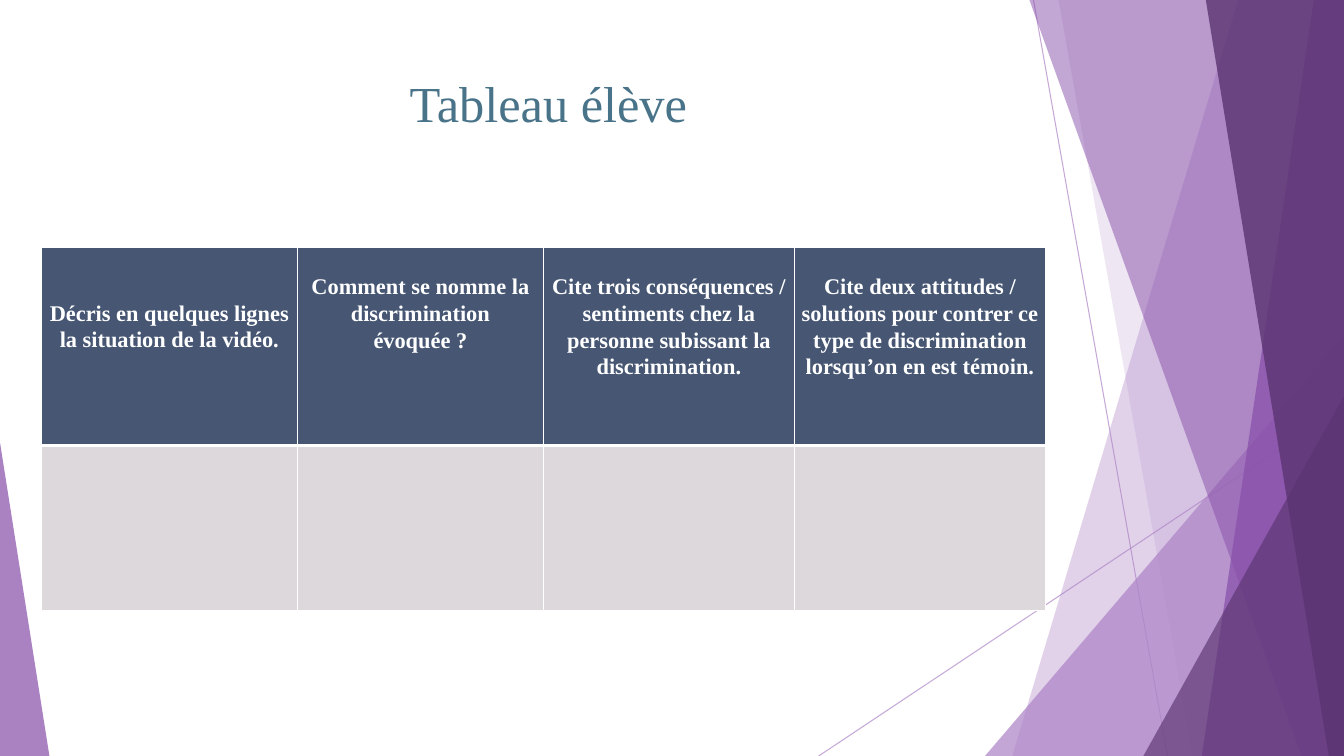
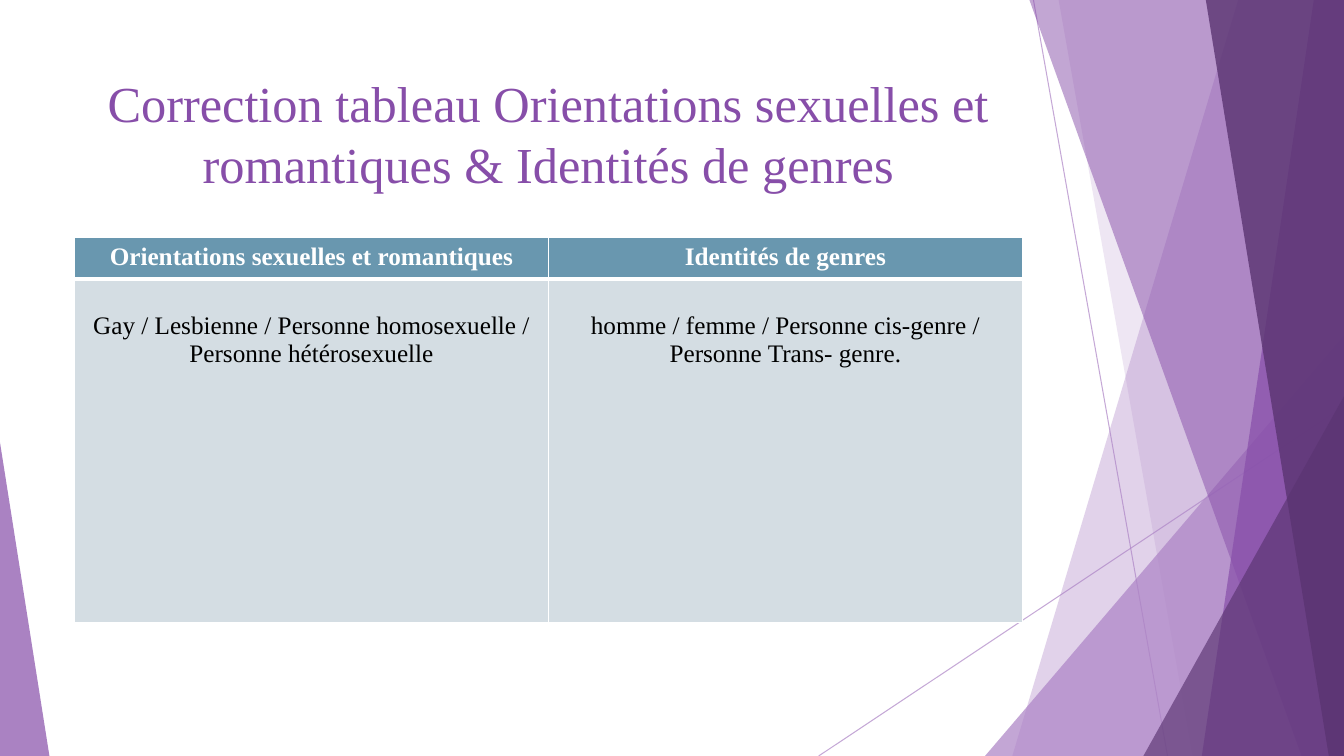
from pptx import Presentation
from pptx.dml.color import RGBColor
from pptx.enum.shapes import MSO_CONNECTOR, MSO_SHAPE
from pptx.enum.text import MSO_ANCHOR, MSO_AUTO_SIZE, PP_ALIGN
from pptx.oxml.xmlchemy import OxmlElement
from pptx.util import Inches, Pt

FONT = "Times New Roman"
SLIDE_WIDTH, SLIDE_HEIGHT = 13.33, 7.5
WHITE, BLACK = "FFFFFF", "000000"
LILAC, PURPLE, PLUM = "AD84C6", "874EA9", "5A3471"
TEAL, NAVY, GREY = "497389", "465673", "DCD8DC"
BLUE, PALE_BLUE = "6997AF", "D4DDE3"


def rgb(color):
    """Turn a hex string into a colour."""
    return RGBColor.from_string(color)


def set_alpha(shape, percent):
    """Make the solid colour of a shape or line translucent."""
    for color in shape.element.xpath(".//a:solidFill/a:srgbClr"):
        alpha = OxmlElement("a:alpha")
        alpha.set("val", str(percent * 1000))
        color.append(alpha)


def paint(shape, color, alpha):
    """Give a shape a translucent fill without outline or shadow."""
    shape.fill.solid()
    shape.fill.fore_color.rgb = rgb(color)
    shape.line.fill.background()
    shape.shadow.inherit = False
    set_alpha(shape, alpha)


def add_thin_line(slide, *ends):
    """Draw a thin lilac line between two points."""
    line = slide.shapes.add_connector(MSO_CONNECTOR.STRAIGHT, *map(Inches, ends))
    line.line.color.rgb = rgb(LILAC)
    line.line.width = Pt(0.75)
    set_alpha(line, 70)
    line.element.spPr.append(OxmlElement("a:effectLst"))


def add_band(slide, top_x, bottom_x, color, alpha):
    """Fill the area from a slanted edge to the right side of the slide."""
    corners = [(SLIDE_WIDTH, 0), (SLIDE_WIDTH, SLIDE_HEIGHT), (bottom_x, SLIDE_HEIGHT)]
    builder = slide.shapes.build_freeform(Inches(top_x), 0)
    builder.add_line_segments([(Inches(x), Inches(y)) for x, y in corners])
    paint(builder.convert_to_shape(), color, alpha)


def add_corner(slide, left, right, top, apex, color, alpha):
    """Place a right-angled triangle on the bottom edge of the slide."""
    box = map(Inches, (left, top, right - left, SLIDE_HEIGHT - top))
    shape = slide.shapes.add_shape(MSO_SHAPE.ISOSCELES_TRIANGLE, *box)
    shape.adjustments[0] = apex
    paint(shape, color, alpha)


def decorate_layout(layout, slide):
    """Draw the shared facets and move them to the layout."""
    add_thin_line(slide, 10.25, 0, 11.58, SLIDE_HEIGHT)
    add_thin_line(slide, SLIDE_WIDTH, 4.03, 8.12, SLIDE_HEIGHT)
    add_band(slide, 12.28, 10.04, LILAC, 36)
    add_band(slide, 10.5, 11.83, LILAC, 20)
    add_corner(slide, 9.77, SLIDE_WIDTH, 3.33, 1, LILAC, 72)
    add_band(slide, 10.21, 12.91, PURPLE, 50)
    add_band(slide, 13.03, 11.92, PURPLE, 70)
    add_band(slide, 11.96, 13.18, PLUM, 80)
    add_corner(slide, 11.34, SLIDE_WIDTH, 3.93, 1, PLUM, 66)
    add_corner(slide, 0, 0.49, 4.39, 0, PURPLE, 70)
    facets = [shape for shape in slide.shapes if not shape.is_placeholder]
    for index, facet in enumerate(facets):
        facet.element.xpath(".//p:cNvPr")[0].set("id", str(100 + index))
        layout.shapes.element.insert(2 + index, facet.element)


def format_text(text_frame, size, color, bold=False):
    """Centre the text and set its font."""
    for paragraph in text_frame.paragraphs:
        paragraph.alignment = PP_ALIGN.CENTER
        for run in paragraph.runs:
            run.font.name = FONT
            run.font.size = Pt(size)
            run.font.bold = bold
            run.font.color.rgb = rgb(color)


def set_title(slide, text, color, height):
    """Fill and place the title."""
    title = slide.shapes.title
    title.left, title.top = Inches(0.74), Inches(0.67)
    title.width, title.height = Inches(9.4), Inches(height)
    text_frame = title.text_frame
    text_frame.text = text
    text_frame.vertical_anchor = MSO_ANCHOR.TOP
    text_frame.auto_size = MSO_AUTO_SIZE.NONE
    format_text(text_frame, 36, color)


def set_borders(cell, thick_edge):
    """Draw white cell borders, with one thick edge."""
    properties = cell._tc.get_or_add_tcPr()
    for index, edge in enumerate(("lnL", "lnR", "lnT", "lnB")):
        line = OxmlElement(f"a:{edge}")
        line.set("w", str(Pt(3 if edge == thick_edge else 1)))
        fill = OxmlElement("a:solidFill")
        color = OxmlElement("a:srgbClr")
        color.set("val", WHITE)
        fill.append(color)
        line.append(fill)
        properties.insert(index, line)


def add_grid(slide, left, top, widths, heights, fills):
    """Add a table with a header row and a body row."""
    frame = slide.shapes.add_table(
        len(heights), len(widths), Inches(left), Inches(top),
        Inches(sum(widths)), Inches(sum(heights)))
    table = frame.table
    table.horz_banding = False
    for column, width in zip(table.columns, widths):
        column.width = Inches(width)
    for row, height, color, edge in zip(table.rows, heights, fills, ("lnB", "lnT")):
        row.height = Inches(height)
        for cell in row.cells:
            cell.fill.solid()
            cell.fill.fore_color.rgb = rgb(color)
            set_borders(cell, edge)
    return table


def fill_cell(cell, text, size, color, bold, top=0.05):
    """Write a centred text into a cell, below the given margin."""
    cell.text_frame.text = text
    cell.margin_top = Inches(top)
    format_text(cell.text_frame, size, color, bold)


def build_student_table(slide):
    """Build the table that the student fills in."""
    set_title(slide, "Tableau élève", TEAL, 0.76)
    table = add_grid(slide, 0.41, 2.45, (2.54, 2.44, 2.49, 2.49), (1.97, 1.64), (NAVY, GREY))
    questions = (
        ("Décris en quelques lignes la situation de la vidéo.", 0.52),
        ("Comment se nomme la discrimination évoquée ?", 0.26),
        ("Cite trois conséquences / sentiments chez la personne subissant la discrimination.", 0.26),
        ("Cite deux attitudes / solutions pour contrer ce type de discrimination "
         "lorsqu’on en est témoin.", 0.26),
    )
    for cell, (question, top) in zip(table.rows[0].cells, questions):
        fill_cell(cell, question, 16, WHITE, True, top)
        cell.margin_left = cell.margin_right = Inches(0.07)
        cell.margin_bottom = 0
        cell.text_frame.paragraphs[0].line_spacing = 1.07


def build_correction(slide):
    """Build the table with the answers."""
    set_title(slide, "Correction tableau Orientations sexuelles et romantiques & "
              "Identités de genres", PURPLE, 1.44)
    table = add_grid(slide, 0.74, 2.36, (4.7, 4.7), (0.41, 3.41), (BLUE, PALE_BLUE))
    answers = (
        ("Orientations sexuelles et romantiques",
         "Gay / Lesbienne / Personne homosexuelle / Personne hétérosexuelle"),
        ("Identités de genres",
         "homme / femme / Personne cis-genre / Personne Trans- genre."),
    )
    for column, (heading, answer) in enumerate(answers):
        fill_cell(table.cell(0, column), heading, 18, WHITE, True)
        fill_cell(table.cell(1, column), answer, 18, BLACK, False, 0.33)


def main():
    """Build and save the presentation."""
    presentation = Presentation()
    presentation.slide_width = Inches(SLIDE_WIDTH)
    presentation.slide_height = Inches(SLIDE_HEIGHT)
    layout = presentation.slide_layouts.get_by_name("Title Only")
    student_slide, correction_slide = (presentation.slides.add_slide(layout) for _ in range(2))
    decorate_layout(layout, student_slide)
    build_student_table(student_slide)
    build_correction(correction_slide)
    presentation.save("out.pptx")


if __name__ == "__main__":
    main()
